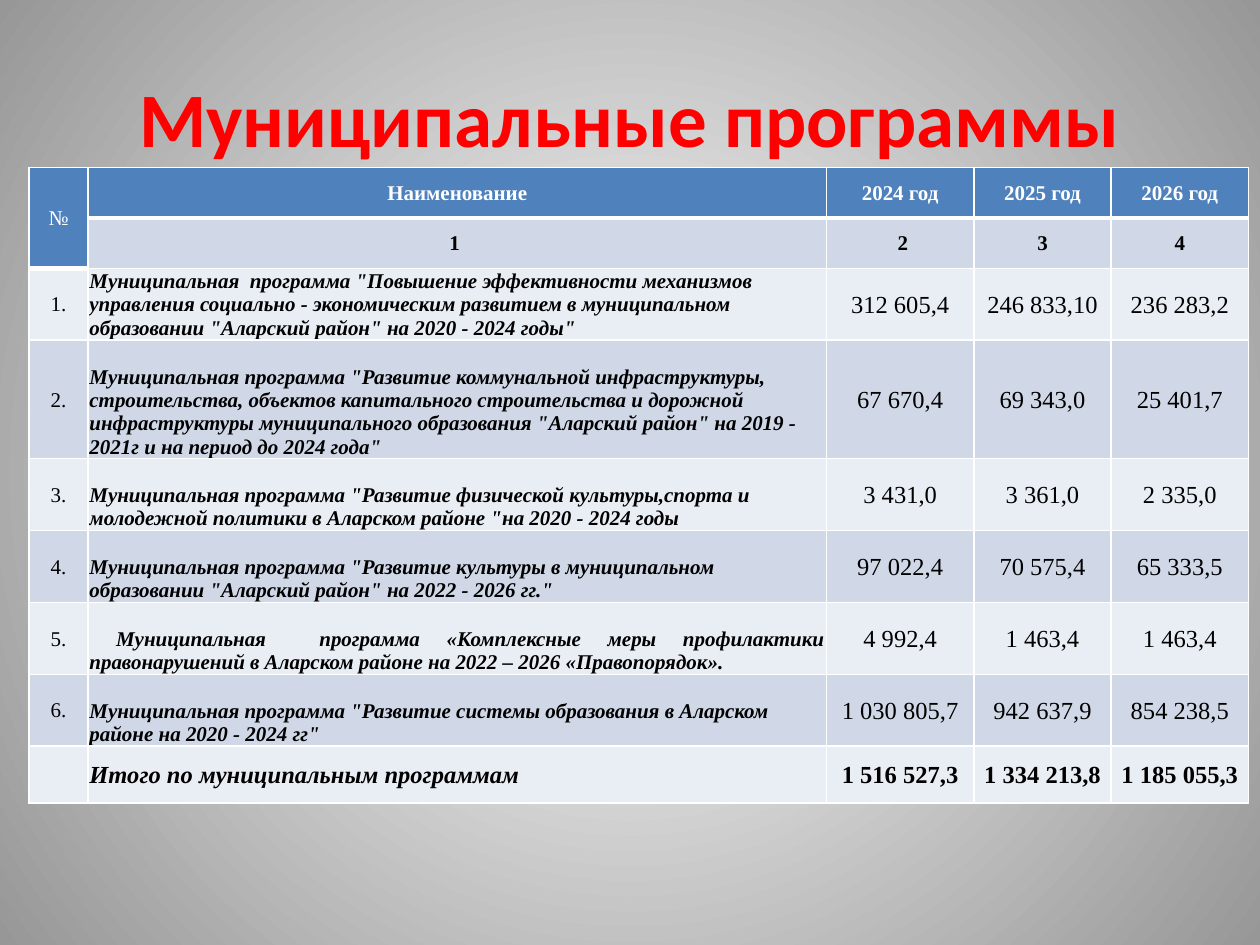
"""Build a slide with a table of municipal programmes and their yearly budgets."""
from dataclasses import dataclass

from lxml import etree
from pptx import Presentation, util as u
from pptx.dml.color import RGBColor
from pptx.enum import text
from pptx.oxml.ns import qn

SLIDE_W, SLIDE_H = 10, 7.5
COLUMNS = [0.47, 5.86, 1.17, 1.09, 1.09]
ROWS = [0.4, 0.4, 0.57, 0.94, 0.57, 0.57, 0.56, 0.57, 0.45]
TABLE_LEFT, TABLE_TOP = 0.23, 1.33
HEADER, BAND_DARK, BAND_LIGHT = "4F81BD", "D0D8E8", "E9EDF4"
WHITE, BLACK, RED = "FFFFFF", "000000", "FF0000"
LEFT, CENTER, JUSTIFY = text.PP_ALIGN.LEFT, text.PP_ALIGN.CENTER, text.PP_ALIGN.JUSTIFY


@dataclass
class Style:
    size: int = 12
    bold: bool = False
    italic: bool = False
    color: str = BLACK
    align: text.PP_ALIGN = CENTER
    top: float = 0.01


@dataclass
class Program:
    name: str
    budgets: tuple[str, str, str]
    top: float = 0.2
    align: text.PP_ALIGN = LEFT


HEADINGS = ("№", "Наименование", "2024 год", "2025 год", "2026 год")
COLUMN_NUMBERS = ("1 ", " 2", "3", "4")
PROGRAMS = [
    Program('Муниципальная  программа "Повышение эффективности механизмов управления '
            'социально - экономическим развитием в муниципальном образовании '
            '"Аларский район" на 2020 - 2024 годы"',
            ("312 605,4", "246 833,10", "236 283,2"), top=0.01),
    Program('Муниципальная программа "Развитие коммунальной инфраструктуры, строительства, '
            'объектов капитального строительства и дорожной инфраструктуры муниципального '
            'образования "Аларский район" на 2019 - 2021г и на период до 2024 года"',
            ("67 670,4", "69 343,0", "25 401,7")),
    Program('Муниципальная программа "Развитие физической культуры,спорта и молодежной '
            'политики в Аларском районе "на 2020 - 2024 годы',
            ("3 431,0", "3 361,0", "2 335,0")),
    Program('Муниципальная программа "Развитие культуры в муниципальном образовании '
            '"Аларский район" на 2022 - 2026 гг."',
            ("97 022,4", "70 575,4", "65 333,5")),
    Program(' Муниципальная  программа «Комплексные меры профилактики правонарушений '
            'в Аларском районе на 2022 – 2026 «Правопорядок».',
            ("4 992,4", "1 463,4", "1 463,4"), align=JUSTIFY),
    Program('Муниципальная программа "Развитие системы образования в Аларском районе '
            'на 2020 - 2024 гг"',
            ("1 030 805,7", "942 637,9", "854 238,5")),
]
TOTAL = Program("Итого по муниципальным программам",
                ("1 516 527,3", "1 334 213,8", "1 185 055,3"))


def rgb(value: str) -> RGBColor:
    """Turn a hex string into a colour."""
    return RGBColor.from_string(value)


def set_background(slide) -> None:
    """Give the slide a round gradient from a white centre to grey edges."""
    fill = slide.background.fill
    fill.gradient()
    for stop, position, color in zip(fill.gradient_stops, (0, 1), (WHITE, "979797")):
        stop.position = position
        stop.color.rgb = rgb(color)
    gradient = slide.element.find(".//" + qn("a:gradFill"))
    linear = gradient.find(qn("a:lin"))
    circle = etree.Element(qn("a:path"), {"path": "circle"})
    etree.SubElement(circle, qn("a:fillToRect"), dict.fromkeys("ltrb", "50000"))
    gradient.replace(linear, circle)


def set_title(slide, wording: str) -> None:
    """Place and format the title."""
    title = slide.shapes.title
    title.left, title.top = u.Inches(SLIDE_W * 0.05), u.Inches(SLIDE_H * 0.04)
    title.width, title.height = u.Inches(SLIDE_W * 0.9), u.Inches(1.25)
    title.text_frame.text = wording
    title.text_frame.vertical_anchor = text.MSO_ANCHOR.MIDDLE
    paragraph = title.text_frame.paragraphs[0]
    paragraph.alignment = CENTER
    font = paragraph.runs[0].font
    font.name, font.size, font.bold = "Calibri", u.Pt(44), True
    font.color.rgb = rgb(RED)


def set_borders(cell, bottom: int) -> None:
    """Draw white cell borders with the given bottom width in points."""
    properties = cell._tc.get_or_add_tcPr()
    for side, width in zip("LRTB", (1, 1, 1, bottom)):
        line = etree.SubElement(properties, qn(f"a:ln{side}"), {"w": str(u.Pt(width))})
        solid = etree.SubElement(line, qn("a:solidFill"))
        etree.SubElement(solid, qn("a:srgbClr"), {"val": WHITE})


def fill_cell(cell, wording: str, style: Style) -> None:
    """Write and format the wording of a cell."""
    cell.vertical_anchor = text.MSO_ANCHOR.MIDDLE
    cell.margin_left = cell.margin_right = u.Inches(0.01)
    cell.margin_top, cell.margin_bottom = u.Inches(style.top), 0
    cell.text_frame.text = wording
    paragraph = cell.text_frame.paragraphs[0]
    paragraph.alignment = style.align
    for run in paragraph.runs:
        font = run.font
        font.name, font.size = "Times New Roman", u.Pt(style.size)
        font.bold, font.italic = style.bold, style.italic
        font.color.rgb = rgb(style.color)


def add_table(slide):
    """Add the empty grid with its bands and borders."""
    table = slide.shapes.add_table(
        len(ROWS), len(COLUMNS), u.Inches(TABLE_LEFT), u.Inches(TABLE_TOP),
        u.Inches(sum(COLUMNS)), u.Inches(sum(ROWS))).table
    for column, width in zip(table.columns, COLUMNS):
        column.width = u.Inches(width)
    for row, height in zip(table.rows, ROWS):
        row.height = u.Inches(height)
    for r in range(len(ROWS)):
        for c in range(len(COLUMNS)):
            cell = table.cell(r, c)
            is_header = r == 0 or (r == 1 and c == 0)
            set_borders(cell, 3 if is_header else 1)
            cell.fill.solid()
            band = BAND_DARK if r % 2 else BAND_LIGHT
            cell.fill.fore_color.rgb = rgb(HEADER if is_header else band)
    table.cell(0, 0).merge(table.cell(1, 0))
    return table


def fill_table(table) -> None:
    """Write the headings, the programmes and the total."""
    for c, heading in enumerate(HEADINGS):
        fill_cell(table.cell(0, c), heading, Style(bold=c > 0, color=WHITE))
    for c, number in enumerate(COLUMN_NUMBERS, 1):
        fill_cell(table.cell(1, c), number, Style(bold=True))
    for r, program in enumerate(PROGRAMS, 2):
        fill_cell(table.cell(r, 0), f"{r - 1}.", Style())
        fill_cell(table.cell(r, 1), program.name,
                  Style(bold=True, italic=True, align=program.align, top=program.top))
        for c, budget in enumerate(program.budgets, 2):
            fill_cell(table.cell(r, c), budget, Style(size=14))
    last = len(ROWS) - 1
    fill_cell(table.cell(last, 1), TOTAL.name,
              Style(size=14, bold=True, italic=True, align=LEFT))
    for c, budget in enumerate(TOTAL.budgets, 2):
        fill_cell(table.cell(last, c), budget, Style(size=14, bold=True))


def main() -> None:
    """Build and save the presentation."""
    deck = Presentation()
    deck.slide_width, deck.slide_height = u.Inches(SLIDE_W), u.Inches(SLIDE_H)
    slide = deck.slides.add_slide(deck.slide_layouts[5])
    set_background(slide)
    set_title(slide, "Муниципальные программы")
    fill_table(add_table(slide))
    deck.save("out.pptx")


if __name__ == "__main__":
    main()
